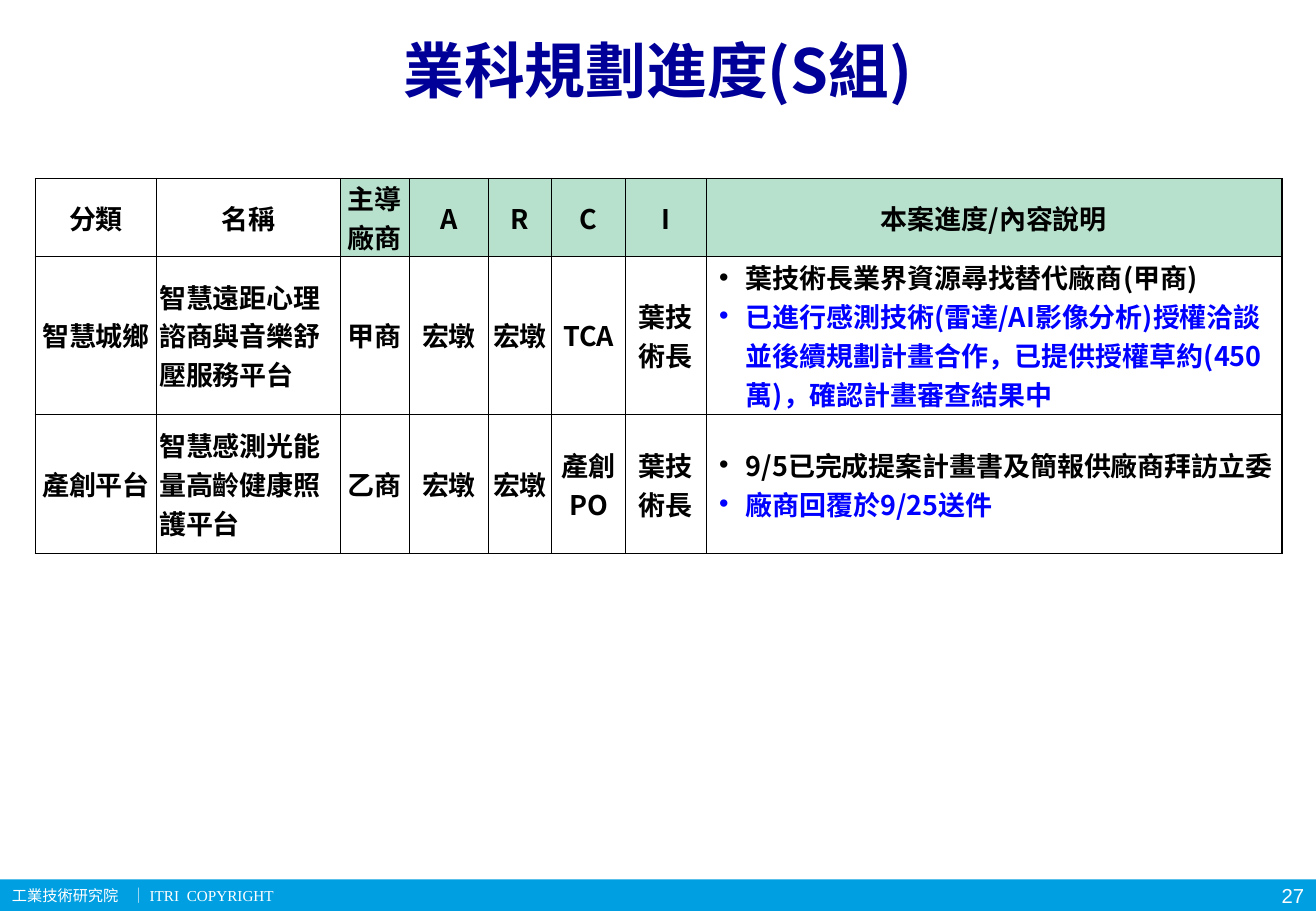
from lxml import etree
from pptx import Presentation
from pptx.dml.color import RGBColor
from pptx.enum.shapes import MSO_SHAPE
from pptx.enum.text import MSO_ANCHOR, PP_ALIGN
from pptx.oxml.ns import qn
from pptx.util import Inches, Pt

LEFT, CENTER, RIGHT = PP_ALIGN.LEFT, PP_ALIGN.CENTER, PP_ALIGN.RIGHT
MIDDLE = MSO_ANCHOR.MIDDLE
RECTANGLE = MSO_SHAPE.RECTANGLE

WIDTH, HEIGHT = 10.83, 7.5
SANS, SERIF, NUMBER = "Noto Sans CJK SC", "Times New Roman", "Arial"
BLACK, BLUE, NAVY, WHITE = "000000", "0000FF", "000099", "FFFFFF"
SKY, MINT = "009FE2", "B7E1CD"

COLUMNS = [1, 1.51, 0.57, 0.65, 0.52, 0.61, 0.66, 4.74]
ROWS = [0.64, 1.3, 1.15]
NAME_COLUMN, VENDOR_COLUMN, PROGRESS_COLUMN = 1, 2, 7
THICK, THIN = 1, 0.5

HEADER = ["分類", "名稱", "主導廠商", "A", "R", "C", "I", "本案進度/內容說明"]
PROJECTS = [
    ["智慧城鄉", "智慧遠距心理諮商與音樂舒壓服務平台", "甲商", "宏墩", "宏墩", "TCA", "葉技術長",
     ["葉技術長業界資源尋找替代廠商(甲商)",
      "已進行感測技術(雷達/AI影像分析)授權洽談並後續規劃計畫合作，"
      "已提供授權草約(450萬)，確認計畫審查結果中"]],
    ["產創平台", "智慧感測光能量高齡健康照護平台", "乙商", "宏墩", "宏墩", "產創PO", "葉技術長",
     ["9/5已完成提案計畫書及簡報供廠商拜訪立委",
      "廠商回覆於9/25送件"]],
]


def color(value):
    return RGBColor.from_string(value)


def write(para, text, size=16, font=SANS, fill=BLACK, bold=False, align=LEFT):
    para.alignment = align
    span = para.add_run()
    span.text = text
    span.font.size = Pt(size)
    span.font.bold = bold
    span.font.color.rgb = color(fill)
    span.font.name = font
    if font == SANS:
        east = etree.SubElement(span.font._element, qn("a:ea"))
        east.set("typeface", font)


def add_bullet(para):
    properties = para._p.get_or_add_pPr()
    properties.set("marL", str(Inches(0.31)))
    properties.set("indent", str(Inches(-0.22)))
    etree.SubElement(properties, qn("a:buFont")).set("typeface", NUMBER)
    etree.SubElement(properties, qn("a:buChar")).set("char", "•")


def add_tab(para, position):
    tabs = etree.SubElement(para._p.get_or_add_pPr(), qn("a:tabLst"))
    etree.SubElement(tabs, qn("a:tab"), pos=str(Inches(position)), algn="l")


def set_borders(cell, widths):
    properties = cell._tc.get_or_add_tcPr()
    for index, (side, width) in enumerate(widths.items()):
        line = etree.Element(qn(f"a:ln{side}"), w=str(Pt(width)))
        fill = etree.SubElement(line, qn("a:solidFill"))
        etree.SubElement(fill, qn("a:srgbClr"), val=BLACK)
        properties.insert(index, line)


def add_label(page, box):
    label = page.shapes.add_textbox(*map(Inches, box))
    frame = label.text_frame
    frame.word_wrap = True
    frame.vertical_anchor = MIDDLE
    frame.margin_top = frame.margin_bottom = 0
    return frame.paragraphs[0]


def add_title(page, box):
    title = page.shapes.title
    title.left, title.top, title.width, title.height = map(Inches, box)
    title.text_frame.vertical_anchor = MIDDLE
    write(title.text_frame.paragraphs[0], "業科規劃進度(S組)",
          size=36, fill=NAVY, bold=True, align=CENTER)


def add_footer(page, box):
    left, top, width, height = box
    bar = page.shapes.add_shape(RECTANGLE, *map(Inches, box))
    bar.shadow.inherit = False
    bar.fill.solid()
    bar.fill.fore_color.rgb = color(SKY)
    bar.line.fill.background()
    number_width = 0.62
    credit = add_label(page, (left, top, width - number_width, height))
    add_tab(credit, 0.98)
    write(credit, "工業技術研究院\t│ ITRI  COPYRIGHT", size=9, font=SERIF, fill=WHITE)
    number = add_label(page, (left + width - number_width, top, number_width, height))
    write(number, "27", size=12, font=NUMBER, fill=WHITE, align=RIGHT)


def fill_cell(cell, content, row, column):
    header = row == 0
    cell.vertical_anchor = MIDDLE
    cell.margin_left = cell.margin_right = Inches(0 if header else 0.02)
    cell.margin_top = cell.margin_bottom = Inches(0 if header else 0.01)
    if header and column >= VENDOR_COLUMN:
        cell.fill.solid()
        cell.fill.fore_color.rgb = color(MINT)
    else:
        cell.fill.background()
    frame = cell.text_frame
    if isinstance(content, list):
        for index, text in enumerate(content):
            para = frame.add_paragraph() if index else frame.paragraphs[0]
            add_bullet(para)
            write(para, text, bold=True, fill=BLUE if index else BLACK)
    else:
        align = LEFT if column == NAME_COLUMN and not header else CENTER
        write(frame.paragraphs[0], content, bold=True, align=align)
    set_borders(cell, {
        "L": THICK if column in (0, VENDOR_COLUMN + 1) else THIN,
        "R": THICK if column in (VENDOR_COLUMN, PROGRESS_COLUMN) else THIN,
        "T": THICK if row <= 1 else THIN,
        "B": THICK if header else THIN,
    })


def add_progress_table(page, left, top):
    frame = page.shapes.add_table(len(ROWS), len(COLUMNS), Inches(left), Inches(top),
                                  Inches(sum(COLUMNS)), Inches(sum(ROWS)))
    table = frame.table
    table.horz_banding = False
    for column, width in zip(table.columns, COLUMNS):
        column.width = Inches(width)
    for row, height in zip(table.rows, ROWS):
        row.height = Inches(height)
    for row, contents in enumerate([HEADER] + PROJECTS):
        for column, content in enumerate(contents):
            fill_cell(table.cell(row, column), content, row, column)


def main():
    deck = Presentation()
    deck.slide_width, deck.slide_height = Inches(WIDTH), Inches(HEIGHT)
    page = deck.slides.add_slide(deck.slide_layouts[5])
    add_footer(page, (0, HEIGHT - 0.26, WIDTH, 0.26))
    add_title(page, (0.54, 0.15, WIDTH - 2 * 0.54, 0.84))
    add_progress_table(page, 0.29, 1.47)
    deck.save("out.pptx")


if __name__ == "__main__":
    main()
